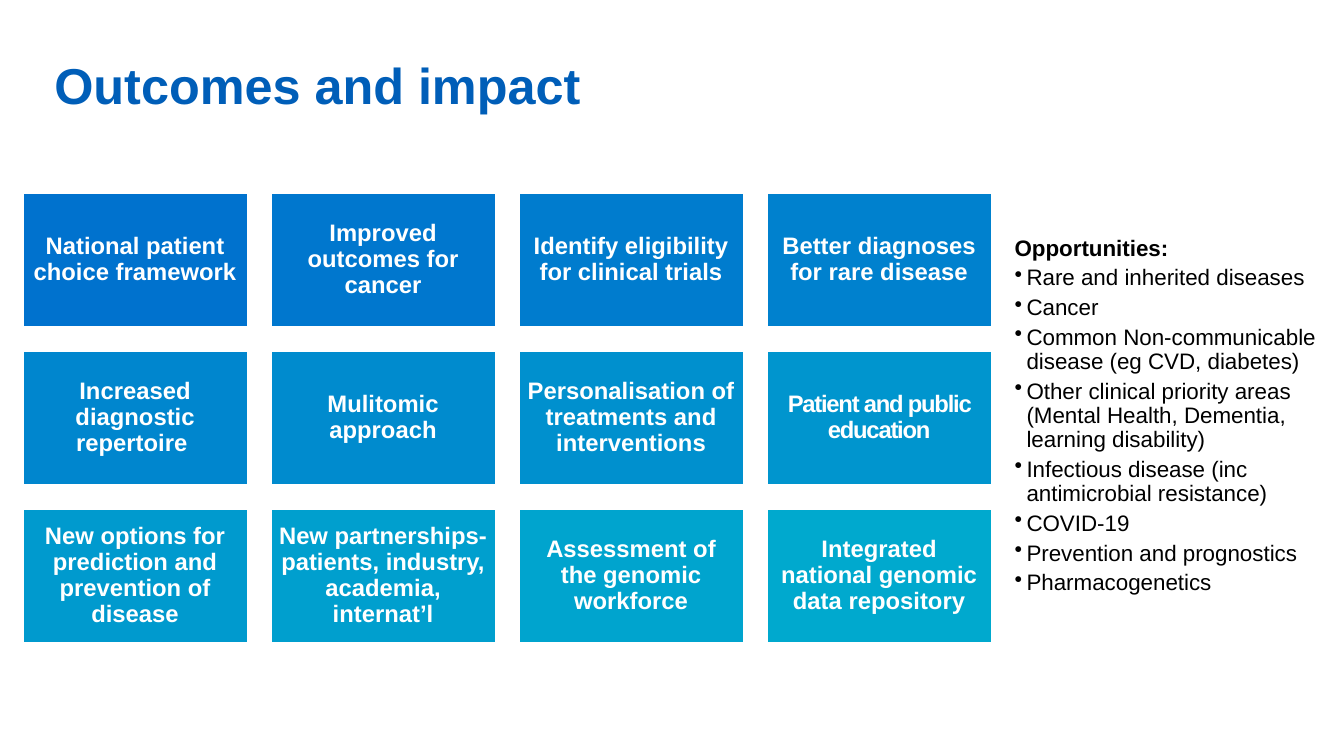
from dataclasses import dataclass

from lxml import etree
from pptx import Presentation
from pptx.dml.color import RGBColor
from pptx.enum.shapes import MSO_SHAPE
from pptx.enum.text import MSO_ANCHOR, PP_ALIGN
from pptx.oxml.ns import qn
from pptx.util import Cm, Pt

RECTANGLE = MSO_SHAPE.RECTANGLE
BOTTOM, MIDDLE = MSO_ANCHOR.BOTTOM, MSO_ANCHOR.MIDDLE
LEFT, CENTER = PP_ALIGN.LEFT, PP_ALIGN.CENTER


@dataclass(frozen=True)
class Theme:
    font: str = "Arial"
    title: RGBColor = RGBColor(0x00, 0x5E, 0xB8)
    body: RGBColor = RGBColor(0x00, 0x00, 0x00)
    white: RGBColor = RGBColor(0xFF, 0xFF, 0xFF)
    card_green: int = 0x72
    card_green_step: int = 5
    card_blue: int = 0xCE
    title_size: int = 36
    card_size: int = 17
    list_size: int = 16


theme = Theme()


def write(para, text, *, size, color, bold=False, align=LEFT, before=0,
          bullet=False, tracking=0):
    """Fill a paragraph with one formatted span."""
    para.alignment = align
    para.line_spacing = 0.9
    para.space_before = Pt(before)
    if bullet:
        properties = para._p.get_or_add_pPr()
        properties.set("marL", str(Cm(0.3)))
        properties.set("indent", str(-Cm(0.3)))
        etree.SubElement(properties, qn("a:buChar")).set("char", "•")
    span = para.add_run()
    span.text = text
    span.font.name = theme.font
    span.font.size = Pt(size)
    span.font.bold = bold
    span.font.color.rgb = color
    if tracking:
        span._r.get_or_add_rPr().set("spc", str(tracking))


deck = Presentation()
deck.slide_width, deck.slide_height = Cm(33.87), Cm(19.05)
page = deck.slides.add_slide(deck.slide_layouts[6])

# Title
title_box = page.shapes.add_textbox(Cm(1.12), Cm(0.79), Cm(22.6), Cm(2.24))
title_box.text_frame.word_wrap = True
title_box.text_frame.vertical_anchor = BOTTOM
write(title_box.text_frame.paragraphs[0], "Outcomes and impact",
      size=theme.title_size, color=theme.title, bold=True)

# Opportunities list
opportunities = [
    "Rare and inherited diseases",
    "Cancer",
    "Common Non-communicable disease (eg CVD, diabetes)",
    "Other clinical priority areas (Mental Health, Dementia, learning disability)",
    "Infectious disease (inc antimicrobial resistance)",
    "COVID-19",
    "Prevention and prognostics",
    "Pharmacogenetics",
]
list_box = page.shapes.add_textbox(Cm(25.32), Cm(5.84), Cm(8.33), Cm(9.4))
list_box.text_frame.word_wrap = True
write(list_box.text_frame.paragraphs[0], "Opportunities:",
      size=theme.list_size, color=theme.body, bold=True)
for opportunity in opportunities:
    write(list_box.text_frame.add_paragraph(), opportunity,
          size=theme.list_size, color=theme.body, before=4, bullet=True)

# Outcome cards, four to a row, shading from blue to cyan
tight_outcome = "Patient and public education"
outcomes = [
    "National patient choice framework",
    "Improved outcomes for cancer",
    "Identify eligibility for clinical trials",
    "Better diagnoses for rare disease",
    "Increased diagnostic repertoire ",
    "Mulitomic approach",
    "Personalisation of treatments and interventions",
    tight_outcome,
    "New options for prediction and prevention of disease",
    "New partnerships- patients, industry, academia, internat’l",
    "Assessment of the genomic workforce",
    "Integrated national genomic data repository",
]
for index, outcome in enumerate(outcomes):
    row, column = divmod(index, 4)
    card = page.shapes.add_shape(
        RECTANGLE, Cm(0.56 + 6.25 * column), Cm(4.85 + 3.98 * row),
        Cm(5.69), Cm(3.4))
    card.shadow.inherit = False
    card.fill.solid()
    green = theme.card_green + theme.card_green_step * index
    card.fill.fore_color.rgb = RGBColor(0, green, theme.card_blue)
    card.line.color.rgb = theme.white
    card.line.width = Pt(2)

    is_tight = outcome == tight_outcome
    inset = Cm(0 if is_tight else 0.18)
    frame = card.text_frame
    frame.word_wrap = True
    frame.vertical_anchor = MIDDLE
    frame.margin_left = frame.margin_right = inset
    frame.margin_top = frame.margin_bottom = inset
    write(frame.paragraphs[0], outcome, size=theme.card_size,
          color=theme.white, bold=True, align=CENTER,
          tracking=-90 if is_tight else 0)

deck.save("out.pptx")
